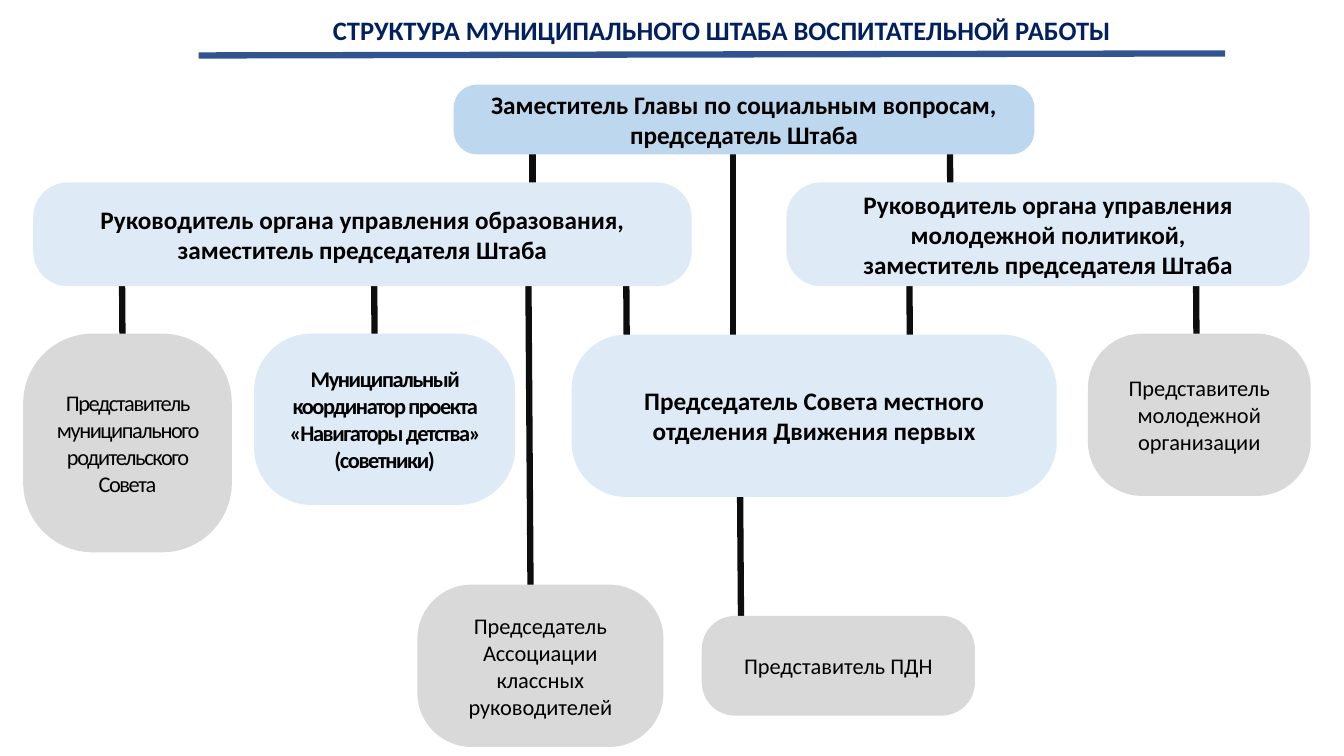
from pptx import Presentation
from pptx.dml.color import RGBColor
from pptx.enum.shapes import MSO_CONNECTOR, MSO_SHAPE
from pptx.enum.text import MSO_ANCHOR, MSO_AUTO_SIZE, PP_ALIGN
from pptx.oxml.ns import qn
from pptx.util import Inches, Pt

STRAIGHT = MSO_CONNECTOR.STRAIGHT
ROUNDED = MSO_SHAPE.ROUNDED_RECTANGLE
CENTER = PP_ALIGN.CENTER
MIDDLE, TOP = MSO_ANCHOR.MIDDLE, MSO_ANCHOR.TOP

FONT = "Calibri"
TITLE_ONLY = 5
COLORS = {
    "title": "002060",
    "rule": "31538F",
    "link": "0D0D0D",
    "text": "000000",
    "chair": "BDD7EE",
    "lead": "DEEBF7",
    "member": "D9D9D9",
}

# x1, y1, x2, y2
LINKS = [
    (5.28, 1.18, 5.28, 2.57),
    (7.27, 1.52, 7.27, 3.32),
    (9.42, 1.2, 9.43, 2.6),
    (1.21, 2.7, 1.22, 4.09),
    (3.71, 2.62, 3.72, 4.02),
    (5.24, 2.62, 5.27, 7),
    (6.21, 2.55, 6.22, 3.95),
    (9.02, 2.8, 9.03, 4.19),
    (11.86, 2.38, 11.87, 3.77),
    (7.34, 4.83, 7.35, 6.22),
]

# role, (left, top, width, height), paragraphs, size, letter spacing in points
BOXES = [
    ("chair", (4.5, 0.84, 5.76, 0.69),
     ["Заместитель Главы по социальным вопросам, председатель Штаба"], 18, 0),
    ("lead", (0.33, 1.81, 6.53, 1.03),
     ["Руководитель органа управления образования, заместитель председателя Штаба"], 18, 0),
    ("lead", (7.8, 1.81, 5.19, 1.03),
     ["Руководитель органа управления молодежной политикой,",
      "заместитель председателя Штаба"], 18, 0),
    ("member", (0.23, 3.31, 2.07, 2.17),
     ["Представитель муниципального родительского Совета"], 16, -1),
    ("lead", (2.52, 3.31, 2.59, 1.7),
     ["Муниципальный координатор проекта «Навигаторы детства» (советники)"], 16, -1),
    ("lead", (5.67, 3.32, 4.81, 1.61),
     ["Председатель Совета местного отделения Движения первых"], 18, 0),
    ("member", (10.79, 3.31, 2.21, 1.61),
     ["Представитель молодежной организации"], 16, 0),
    ("member", (4.14, 5.8, 2.44, 1.61),
     ["Председатель Ассоциации классных руководителей"], 16, 0),
    ("member", (6.96, 6.11, 2.71, 0.99), ["Представитель ПДН"], 16, 0),
]


def color(name):
    return RGBColor.from_string(COLORS[name])


def format_paragraph(paragraph, size, color_name, bold):
    paragraph.alignment = CENTER
    font = paragraph.font
    font.name, font.size, font.bold = FONT, Pt(size), bold
    font.color.rgb = color(color_name)


def set_title(slide, text):
    title = slide.shapes.title
    title.left, title.top = Inches(1.92), Inches(0.13)
    title.width, title.height = Inches(10.48), Inches(0.33)
    frame = title.text_frame
    frame.text = text
    frame.margin_left = frame.margin_right = frame.margin_bottom = 0
    frame.margin_top = Inches(0.01)
    frame.vertical_anchor = TOP
    frame.auto_size = MSO_AUTO_SIZE.NONE
    format_paragraph(frame.paragraphs[0], 19, "title", True)


def add_line(slide, ends, color_name):
    line = slide.shapes.add_connector(STRAIGHT, *map(Inches, ends))
    line.line.color.rgb = color(color_name)
    line.line.width = Pt(4.5)
    properties = line._element.spPr
    properties.append(properties.makeelement(qn("a:effectLst"), {}))


def add_box(slide, role, bounds, texts, size, spacing):
    box = slide.shapes.add_shape(ROUNDED, *map(Inches, bounds))
    box.adjustments[0] = 0.334
    box.shadow.inherit = False
    box.fill.solid()
    box.fill.fore_color.rgb = color(role)
    box.line.fill.background()
    frame = box.text_frame
    frame.word_wrap = True
    frame.vertical_anchor = MIDDLE
    frame.text = "\n".join(texts)
    for paragraph in frame.paragraphs:
        format_paragraph(paragraph, size, "text", role != "member")
        if spacing:
            for run in paragraph.runs:
                run._r.get_or_add_rPr().set("spc", str(spacing * 100))


def main():
    presentation = Presentation()
    presentation.slide_width = Inches(13.33)
    presentation.slide_height = Inches(7.5)
    slide = presentation.slides.add_slide(presentation.slide_layouts[TITLE_ONLY])
    set_title(slide, "СТРУКТУРА МУНИЦИПАЛЬНОГО ШТАБА ВОСПИТАТЕЛЬНОЙ РАБОТЫ")
    add_line(slide, (1.97, 0.55, 12.15, 0.53), "rule")
    for ends in LINKS:
        add_line(slide, ends, "link")
    for box in BOXES:
        add_box(slide, *box)
    presentation.save("out.pptx")


if __name__ == "__main__":
    main()
